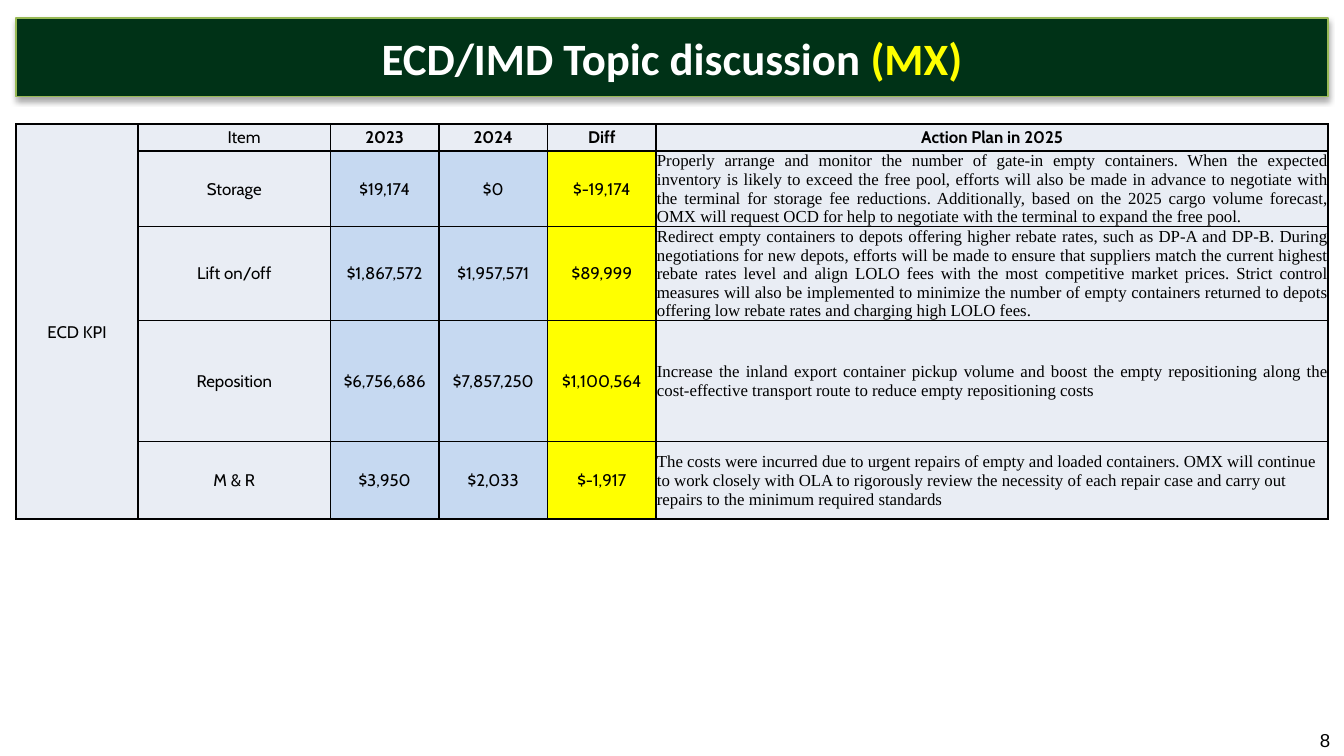
from lxml import etree
from pptx import Presentation
from pptx import util as u
from pptx.dml.color import RGBColor
from pptx.enum import shapes, text
from pptx.oxml import parse_xml
from pptx.oxml.ns import nsdecls, qn

BLACK = RGBColor(0x00, 0x00, 0x00)
WHITE = RGBColor(0xFF, 0xFF, 0xFF)
YELLOW = RGBColor(0xFF, 0xFF, 0x00)
DARK_GREEN = RGBColor(0x00, 0x32, 0x17)
LEAF_GREEN = RGBColor(0x98, 0xB9, 0x55)
PALE_GREY = RGBColor(0xE9, 0xED, 0xF4)
PALE_BLUE = RGBColor(0xC6, 0xD9, 0xF1)

LEFT, CENTER, JUSTIFY = (
    text.PP_ALIGN.LEFT, text.PP_ALIGN.CENTER, text.PP_ALIGN.JUSTIFY)


def add_text(para, words, font="Cabin", size=9, color=BLACK, bold=False,
             align=CENTER):
    para.alignment = align
    span = para.add_run()
    span.text = words
    span.font.name = font
    span.font.size = u.Pt(size)
    span.font.color.rgb = color
    span.font.bold = bold


def add_borders(cell):
    props = cell._tc.get_or_add_tcPr()
    for index, side in enumerate(("lnL", "lnR", "lnT", "lnB")):
        line = parse_xml(
            f'<a:{side} {nsdecls("a")} w="{u.Pt(1)}"><a:solidFill>'
            f'<a:srgbClr val="{BLACK}"/></a:solidFill></a:{side}>')
        props.insert(index, line)


deck = Presentation()
deck.slide_width = u.Pt(720)
deck.slide_height = u.Pt(405)
page = deck.slides.add_slide(deck.slide_layouts[6])

# Title banner with a soft shadow below
banner = page.shapes.add_shape(
    shapes.MSO_SHAPE.RECTANGLE, u.Pt(8.5), u.Pt(9.7), u.Pt(703), u.Pt(42))
banner.fill.solid()
banner.fill.fore_color.rgb = DARK_GREEN
banner.line.color.rgb = LEAF_GREEN
banner.line.width = u.Pt(0.75)
banner.shadow.inherit = False
effects = banner._element.spPr.find(qn("a:effectLst"))
shadow = etree.SubElement(
    effects, qn("a:outerShdw"), blurRad=str(u.Pt(3.1)), dist=str(u.Pt(1.8)),
    dir="5400000", rotWithShape="0")
shade = etree.SubElement(shadow, qn("a:srgbClr"), val=str(BLACK))
etree.SubElement(shade, qn("a:alpha"), val="35000")

frame = banner.text_frame
frame.margin_left = frame.margin_right = 0
frame.margin_top = frame.margin_bottom = 0
frame.vertical_anchor = text.MSO_ANCHOR.MIDDLE
title = frame.paragraphs[0]
for words, color in (("ECD/IMD Topic discussion ", WHITE), ("(MX)", YELLOW)):
    add_text(title, words, font="Calibri", size=24, color=color, bold=True)

# KPI table content
ROWS = [
    ("ECD KPI", "Item", "2023", "2024", "Diff", "Action Plan in 2025"),
    ("", "Storage", "$19,174", "$0", "$-19,174",
     "Properly arrange and monitor the number of gate-in empty containers. "
     "When the expected inventory is likely to exceed the free pool, efforts "
     "will also be made in advance to negotiate with the terminal for storage "
     "fee reductions. Additionally, based on the 2025 cargo volume forecast, "
     "OMX will request OCD for help to negotiate with the terminal to expand "
     "the free pool."),
    ("", "Lift on/off", "$1,867,572", "$1,957,571", "$89,999",
     "Redirect empty containers to depots offering higher rebate rates, such "
     "as DP-A and DP-B. During negotiations for new depots, efforts will be "
     "made to ensure that suppliers match the current highest rebate rates "
     "level and align LOLO fees with the most competitive market prices. "
     "Strict control measures will also be implemented to minimize the number "
     "of empty containers returned to depots offering low rebate rates and "
     "charging high LOLO fees."),
    ("", "Reposition", "$6,756,686", "$7,857,250", "$1,100,564",
     "Increase the inland export container pickup volume and boost the empty "
     "repositioning along the cost-effective transport route to reduce empty "
     "repositioning costs"),
    ("", "M & R", "$3,950", "$2,033", "$-1,917",
     "The costs were incurred due to urgent repairs of empty and loaded "
     "containers. OMX will continue to work closely with OLA to rigorously "
     "review the necessity of each repair case and carry out repairs to the "
     "minimum required standards"),
]
WIDTHS = (65.5, 103, 58.2, 58.2, 58.1, 360)
HEIGHTS = (14.4, 40.3, 50.3, 64.8, 41.6)
FILLS = (PALE_GREY, PALE_GREY, PALE_BLUE, PALE_BLUE, YELLOW, PALE_GREY)
ACTION = len(WIDTHS) - 1

# KPI table
holder = page.shapes.add_table(
    len(ROWS), len(WIDTHS), u.Pt(8.5), u.Pt(66.5),
    u.Pt(sum(WIDTHS)), u.Pt(sum(HEIGHTS)))
table = holder.table
table.first_row = table.horz_banding = False
for column, width in zip(table.columns, WIDTHS):
    column.width = u.Pt(width)
for row, height in zip(table.rows, HEIGHTS):
    row.height = u.Pt(height)
table.cell(0, 0).merge(table.cell(len(ROWS) - 1, 0))

for r, row in enumerate(ROWS):
    for c, words in enumerate(row):
        cell = table.cell(r, c)
        cell.fill.solid()
        cell.fill.fore_color.rgb = FILLS[c] if r else PALE_GREY
        cell.margin_left = cell.margin_right = cell.margin_top = u.Pt(0.5)
        cell.margin_bottom = 0
        cell.vertical_anchor = text.MSO_ANCHOR.MIDDLE
        add_borders(cell)
        if not words:
            continue
        para = cell.text_frame.paragraphs[0]
        if r and c == ACTION:
            last = r == len(ROWS) - 1
            add_text(para, words, font="Times New Roman",
                     align=LEFT if last else JUSTIFY)
        else:
            add_text(para, words, bold=r == 0 and c > 1)

# The first two headings sit slightly off centre
table.cell(0, 0).margin_top = u.Pt(12)
table.cell(0, 1).margin_left = u.Pt(11)

# Page number
box = page.shapes.add_textbox(u.Pt(700), u.Pt(388), u.Pt(46), u.Pt(16.5))
box.text_frame.word_wrap = True
box.text_frame.vertical_anchor = text.MSO_ANCHOR.MIDDLE
add_text(box.text_frame.paragraphs[0], "8", font="Arial", size=10, align=LEFT)

deck.save("out.pptx")
